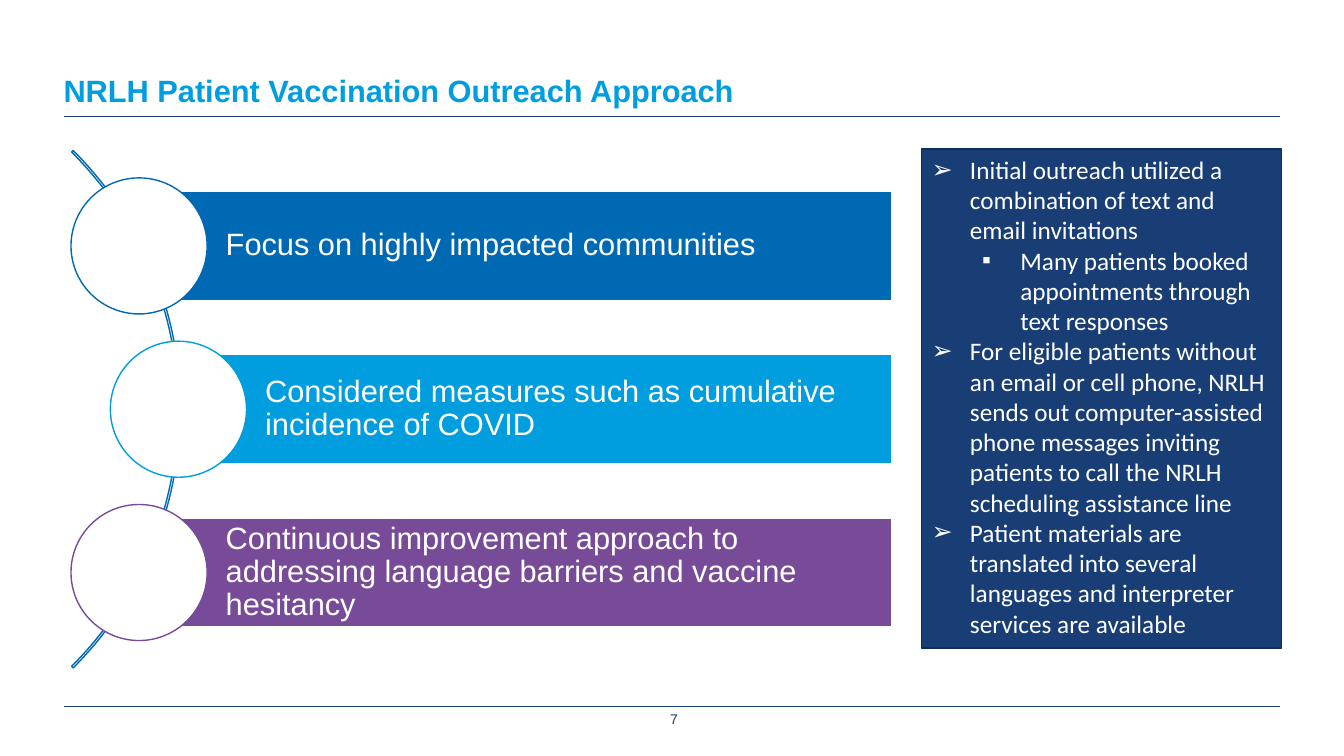
import dataclasses

import lxml.etree
import pptx
import pptx.dml.color
import pptx.enum.shapes
import pptx.enum.text
import pptx.oxml.ns
import pptx.util

SHAPE = pptx.enum.shapes.MSO_SHAPE
ANCHOR = pptx.enum.text.MSO_ANCHOR
ALIGN = pptx.enum.text.PP_ALIGN
Inches = pptx.util.Inches
Pt = pptx.util.Pt
qn = pptx.oxml.ns.qn


@dataclasses.dataclass(frozen=True)
class Theme:
    navy: str = "183E75"
    navy_edge: str = "122E57"
    blue: str = "0069B4"
    sky: str = "009EDF"
    purple: str = "784B98"
    white: str = "FFFFFF"
    heading_font: str = "Arial"
    list_font: str = "Calibri"
    heading_size: int = 22
    list_size: int = 18
    number_size: int = 10


class Deck:
    def __init__(self, theme):
        self.theme = theme
        self.prs = pptx.Presentation()
        self.prs.slide_width = Inches(13.33)
        self.prs.slide_height = Inches(7.5)
        self.slide = self.prs.slides.add_slide(self.prs.slide_layouts[1])

    def x(self, percent):
        return round(self.prs.slide_width * percent / 100)

    def y(self, percent):
        return round(self.prs.slide_height * percent / 100)

    def box(self, left, top, width, height):
        return self.x(left), self.y(top), self.x(width), self.y(height)

    def place(self, sp, *box):
        sp.left, sp.top, sp.width, sp.height = self.box(*box)

    def paint(self, sp, fill, line):
        if fill:
            sp.fill.solid()
            sp.fill.fore_color.rgb = pptx.dml.color.RGBColor.from_string(fill)
        else:
            sp.fill.background()
        sp.line.color.rgb = pptx.dml.color.RGBColor.from_string(line)
        sp.line.width = Pt(1)

    def frame(self, sp, insets, anchor=ANCHOR.TOP):
        tf = sp.text_frame
        tf.word_wrap = True
        tf.auto_size = pptx.enum.text.MSO_AUTO_SIZE.NONE
        tf.vertical_anchor = anchor
        tf.margin_left, tf.margin_top, tf.margin_right, tf.margin_bottom = map(Inches, insets)
        return tf

    def add_text(self, p, text, size, color, font, bold=False, align=ALIGN.LEFT):
        p.alignment = align
        p.space_before = Pt(0)
        r = p.add_run()
        r.text = text
        r.font.size = Pt(size)
        r.font.name = font
        r.font.bold = bold
        r.font.color.rgb = pptx.dml.color.RGBColor.from_string(color)

    def title(self, text, *box):
        t = self.theme
        sp = self.slide.shapes.title
        self.place(sp, *box)
        p = self.frame(sp, (0, 0, 0, 0)).paragraphs[0]
        p.line_spacing = Pt(t.heading_size)
        self.add_text(p, text, t.heading_size, t.sky, t.heading_font, bold=True)

    def bullets(self, items, *box):
        t = self.theme
        sp = self.slide.placeholders[1]
        self.place(sp, *box)
        self.paint(sp, t.navy, t.navy_edge)
        tf = self.frame(sp, (0.1, 0.05, 0.1, 0.05))
        for i, (level, text) in enumerate(items):
            p = tf.add_paragraph() if i else tf.paragraphs[0]
            p.level = level
            pPr = p._p.get_or_add_pPr()
            pPr.set("marL", str(Inches(0.38 + 0.5 * level)))
            pPr.set("indent", str(Inches(-0.38)))
            lxml.etree.SubElement(pPr, qn("a:buFont")).set("typeface", t.heading_font)
            lxml.etree.SubElement(pPr, qn("a:buChar")).set("char", "➢▪"[level])
            self.add_text(p, text, t.list_size, t.white, t.list_font)

    def rule(self, left, right, top):
        ln = self.slide.shapes.add_connector(
            pptx.enum.shapes.MSO_CONNECTOR.STRAIGHT,
            self.x(left), self.y(top), self.x(right), self.y(top))
        ln.line.color.rgb = pptx.dml.color.RGBColor.from_string(self.theme.navy)
        ln.line.width = Pt(0.75)
        lxml.etree.SubElement(ln._element.spPr, qn("a:effectLst"))

    def shape(self, kind, fill, line, *box):
        sp = self.slide.shapes.add_shape(kind, *self.box(*box))
        sp.shadow.inherit = False
        self.paint(sp, fill, line)
        return sp

    def arc(self, *box):
        sp = self.shape(SHAPE.BLOCK_ARC, None, self.theme.blue, *box)
        for i, value in enumerate((189, 27, 0.003)):
            sp.adjustments[i] = value

    def step(self, text, color, left, top, right, height):
        t = self.theme
        bar = self.shape(SHAPE.RECTANGLE, color, t.white, left, top, right - left, height)
        p = self.frame(bar, (0.86, 0.06, 0.06, 0.06), ANCHOR.MIDDLE).paragraphs[0]
        p.line_spacing = 0.9
        self.add_text(p, text, t.heading_size, t.white, t.heading_font)
        width, tall = 10.13, 18
        self.shape(SHAPE.OVAL, t.white, color,
                   left - width / 2, top + (height - tall) / 2, width, tall)

    def number(self, text, *box):
        t = self.theme
        sp = self.slide.shapes.add_textbox(*self.box(*box))
        p = self.frame(sp, (0, 0, 0, 0)).paragraphs[0]
        self.add_text(p, text, t.number_size, t.navy, t.heading_font, align=ALIGN.CENTER)


def main():
    theme = Theme()
    deck = Deck(theme)
    left, right = 4.73, 95.27
    for top in (15.47, 93.47):
        deck.rule(left, right, top)
    deck.title("NRLH Patient Vaccination Outreach Approach", left, 10.27, right - left, 5.2)
    deck.number("7", 46.14, 94, 8.03, 3.47)
    deck.bullets([
        (0, "Initial outreach utilized a combination of text and email invitations"),
        (1, "Many patients booked appointments through text responses"),
        (0, "For eligible patients without an email or cell phone, NRLH sends out "
            "computer-assisted phone messages inviting patients to call the NRLH "
            "scheduling assistance line"),
        (0, "Patient materials are translated into several languages and interpreter "
            "services are available"),
    ], 68.57, 19.73, 26.78, 66)

    deck.arc(-41.04, 5.73, 54.46, 96.8)
    steps = [
        ("Focus on highly impacted communities", theme.blue, 10.35),
        ("Considered measures such as cumulative incidence of COVID", theme.sky, 13.28),
        ("Continuous improvement approach to addressing language barriers and vaccine "
         "hesitancy", theme.purple, 10.35),
    ]
    for i, (text, color, start) in enumerate(steps):
        deck.step(text, color, start, 25.33 + 21.6 * i, 66.32, 14.4)
    deck.prs.save("out.pptx")


if __name__ == "__main__":
    main()
